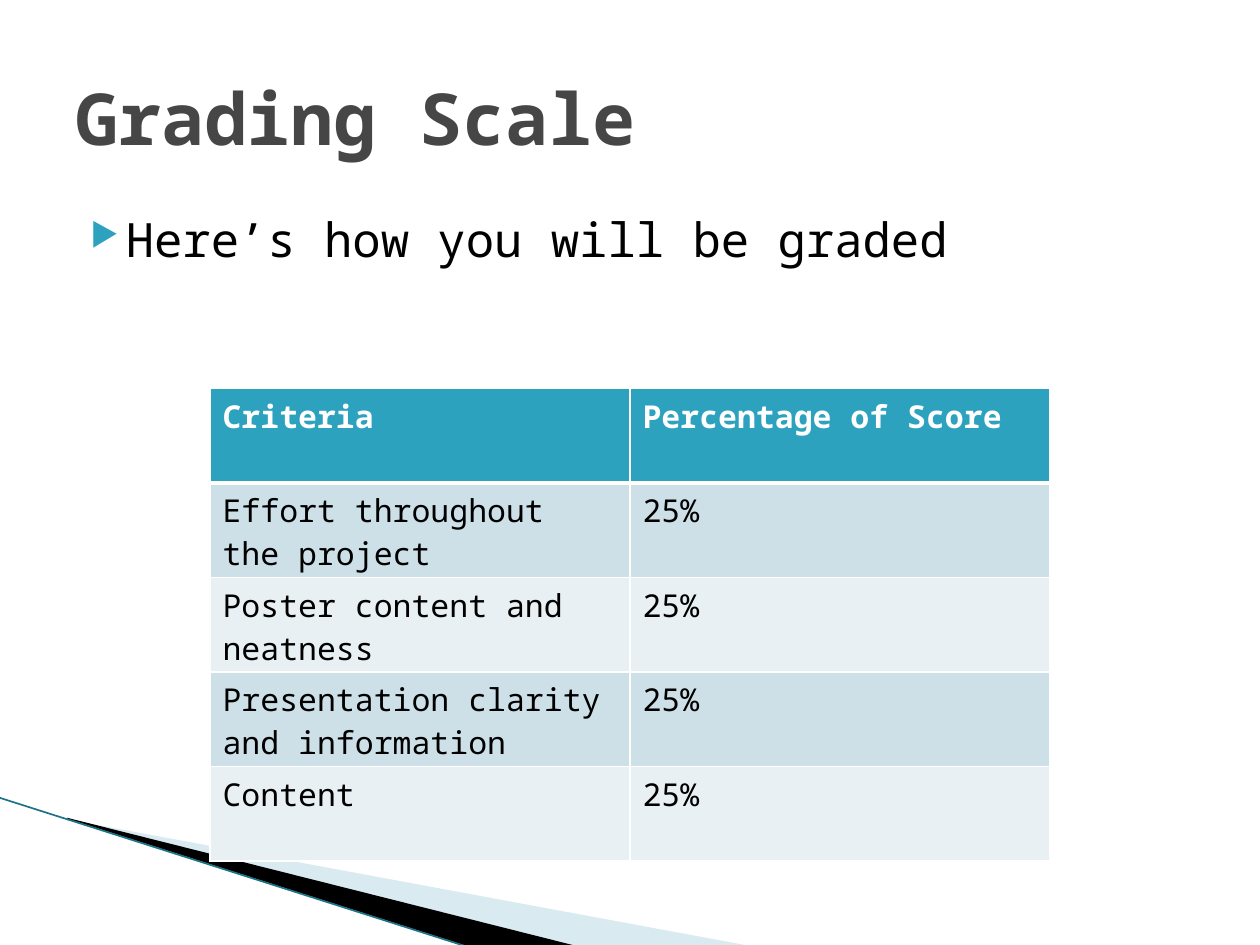
from lxml.etree import SubElement
from pptx import Presentation
from pptx.dml.color import RGBColor
from pptx.enum.shapes import MSO_CONNECTOR
from pptx.enum.text import MSO_ANCHOR, MSO_AUTO_SIZE, PP_ALIGN
from pptx.oxml.ns import qn
from pptx.util import Pt

FONT = "Noto Sans Mono"
TEAL = "2DA2BF"


def color(value):
    return RGBColor.from_string(value)


def format_text(frame, size, ink, bold=False):
    for para in frame.paragraphs:
        for span in para.runs:
            span.font.name = FONT
            span.font.size = Pt(size)
            span.font.bold = bold
            span.font.color.rgb = color(ink)


deck = Presentation()
deck.slide_width, deck.slide_height = Pt(720), Pt(540)
page = deck.slides.add_slide(deck.slide_layouts[5])

# Corner wedges: fill, opacity in percent, outline points
wedges = [
    ("A0CBDC", 40, [(39.6, 468.5), (428.4, 540.5), (328.5, 540.5), (39.6, 468)]),
    ("000000", 100, [(38.2, 467.3), (329, 540.5), (268, 541), (38.9, 468)]),
]
for fill, opacity, points in wedges:
    builder = page.shapes.build_freeform(Pt(points[0][0]), Pt(points[0][1]))
    builder.add_line_segments([(Pt(x), Pt(y)) for x, y in points[1:]])
    wedge = builder.convert_to_shape()
    wedge.shadow.inherit = False
    wedge.fill.solid()
    wedge.fill.fore_color.rgb = color(fill)
    wedge.line.fill.background()
    if opacity < 100:
        tint = wedge.fill._xPr.find(".//" + qn("a:srgbClr"))
        SubElement(tint, qn("a:alpha"), val=str(opacity * 1000))

# Edge line of the corner
edge = page.shapes.add_connector(
    MSO_CONNECTOR.STRAIGHT, Pt(-0.5), Pt(455.8), Pt(267), Pt(541))
edge.line.color.rgb = color("1A7486")
edge.line.width = Pt(0.95)
SubElement(edge._element.spPr, qn("a:effectLst"))

# Title
title = page.shapes.title
title.left, title.top, title.width, title.height = Pt(36), Pt(21.6), Pt(648), Pt(90)
title.text_frame.text = "Grading Scale"
title.text_frame.auto_size = MSO_AUTO_SIZE.NONE
title.text_frame.vertical_anchor = MSO_ANCHOR.MIDDLE
title.text_frame.paragraphs[0].alignment = PP_ALIGN.LEFT
format_text(title.text_frame, 41, "464646", True)

# Bulleted introduction
box = page.shapes.add_textbox(Pt(36), Pt(116.6), Pt(648), Pt(356.4))
box.text_frame.word_wrap = True
box.text_frame.text = "Here’s how you will be graded"
format_text(box.text_frame, 27, "000000")
para = box.text_frame.paragraphs[0]
para.space_before = Pt(4)
settings = para._p.get_or_add_pPr()
settings.set("marL", str(Pt(28.8)))
settings.set("indent", str(Pt(-20.2)))
bullet_color = SubElement(settings, qn("a:buClr"))
SubElement(bullet_color, qn("a:srgbClr"), val=TEAL)
SubElement(settings, qn("a:buSzPct"), val="68000")
SubElement(settings, qn("a:buChar"), char="▶")

# Grading table
rows = [
    ("Criteria", "Percentage of Score"),
    ("Effort throughout the project", "25%"),
    ("Poster content and neatness", "25%"),
    ("Presentation clarity and information", "25%"),
    ("Content", "25%"),
]
table = page.shapes.add_table(
    len(rows), 2, Pt(120), Pt(222), Pt(480), Pt(270)).table
for row_index, row in enumerate(rows):
    header = row_index == 0
    band = TEAL if header else ("E8F0F4", "CDE0E8")[row_index % 2]
    for column_index, text in enumerate(row):
        cell = table.cell(row_index, column_index)
        cell.text = text
        format_text(cell.text_frame, 18, "FFFFFF" if header else "000000", header)
        # Borders come before the fill in the cell properties
        properties = cell._tc.get_or_add_tcPr()
        for side in ("lnL", "lnR", "lnT", "lnB"):
            thick = (header and side == "lnB") or (row_index == 1 and side == "lnT")
            border = SubElement(properties, qn("a:" + side), w=str(Pt(3 if thick else 1)))
            paint = SubElement(border, qn("a:solidFill"))
            SubElement(paint, qn("a:srgbClr"), val="FFFFFF")
        cell.fill.solid()
        cell.fill.fore_color.rgb = color(band)

deck.save("out.pptx")
